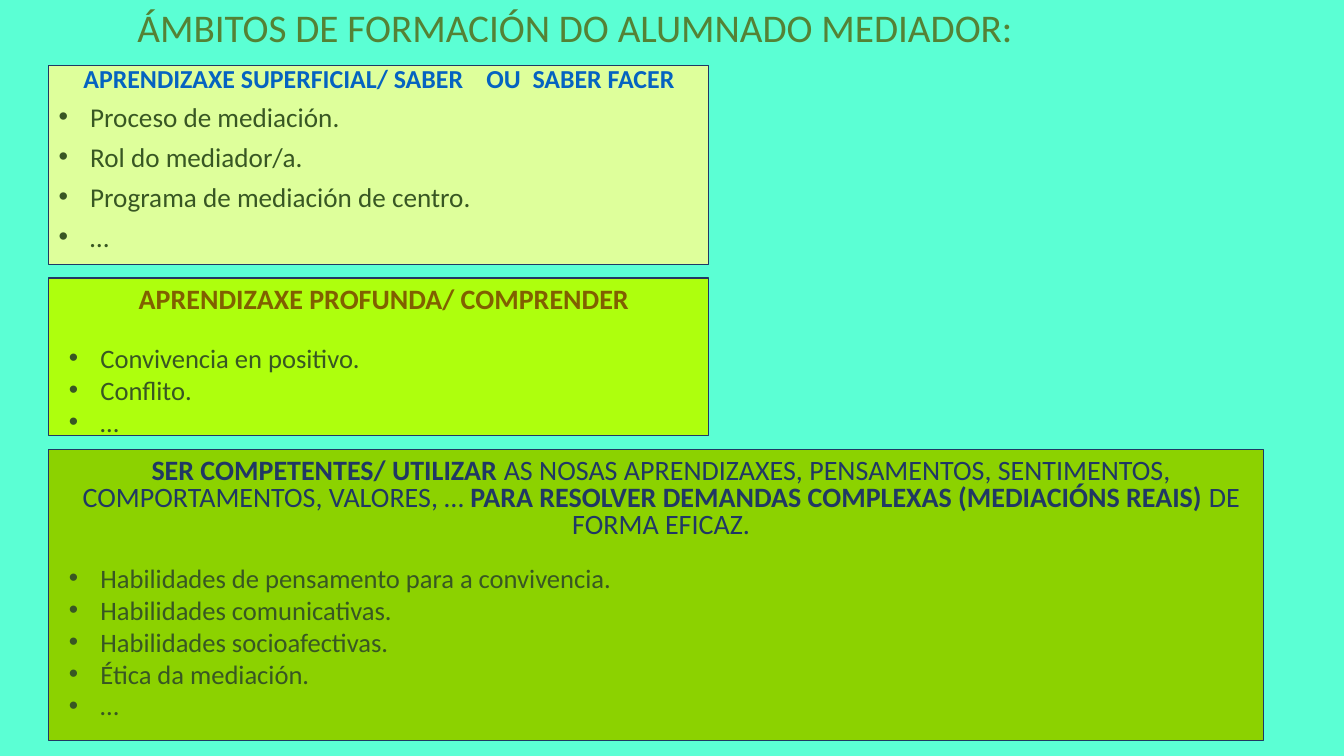
from lxml import etree
from pptx import Presentation
from pptx.dml.color import RGBColor
from pptx.enum import shapes, text
from pptx.oxml import ns
from pptx.util import Pt

AQUA = RGBColor(0x5B, 0xFF, 0xD4)
PALE = RGBColor(0xDE, 0xFF, 0x9B)
LIME = RGBColor(0xAE, 0xFF, 0x0D)
GREEN = RGBColor(0x8C, 0xD2, 0x00)
NAVY = RGBColor(0x20, 0x38, 0x64)
BLUE = RGBColor(0x05, 0x63, 0xC1)
BROWN = RGBColor(0x80, 0x60, 0x00)
FOREST = RGBColor(0x38, 0x57, 0x23)
LEAF = RGBColor(0x54, 0x82, 0x35)

FACE = "Calibri"
NO_GRID = "{2D5ABB26-0587-4C30-8999-92F81FD0307C}"
LEFT = 34.8
INDENT = 22.5


def style(para, size, color, spacing=1.0, before=0):
    font = para.font
    font.name, font.size, font.color.rgb = FACE, Pt(size), color
    para.line_spacing = spacing
    para.space_before = Pt(before)


def bullet(para):
    props = para._p.get_or_add_pPr()
    props.set("marL", str(Pt(INDENT)))
    props.set("indent", str(-Pt(INDENT)))
    font = etree.SubElement(props, ns.qn("a:buFont"))
    font.set("typeface", "Arial")
    mark = etree.SubElement(props, ns.qn("a:buChar"))
    mark.set("char", "•")
    # The schema wants the bullet ahead of the default run properties.
    props.append(props.find(ns.qn("a:defRPr")))


def add_title(slide, box, words):
    """Set the heading in a table of one cell without grid or bands."""
    table = slide.shapes.add_table(1, 1, *map(Pt, box)).table
    table.first_row = table.horz_banding = False
    table._tbl.tblPr.find(ns.qn("a:tableStyleId")).text = NO_GRID
    cell = table.cell(0, 0)
    cell.fill.background()
    cell.margin_right = Pt(11.2)
    cell.margin_top = cell.margin_bottom = Pt(3.6)
    cell.text = words
    para = cell.text_frame.paragraphs[0]
    para.alignment = text.PP_ALIGN.CENTER
    style(para, 28, LEAF)


def add_panel(slide, box, fill, inset, head, items, first, rest):
    """Draw a panel.

    head: size, colour, line spacing and (words, bold) runs.
    items: size, line spacing and words of the bullets.
    first, rest: space before the first bullet and the others.
    """
    panel = slide.shapes.add_shape(shapes.MSO_SHAPE.RECTANGLE, *map(Pt, box))
    panel.shadow.inherit = False
    panel.fill.solid()
    panel.fill.fore_color.rgb = fill
    panel.line.color.rgb = NAVY
    panel.line.width = Pt(0.75)

    frame = panel.text_frame
    frame.word_wrap = True
    frame.vertical_anchor = text.MSO_ANCHOR.TOP
    frame.margin_left, frame.margin_top = map(Pt, inset)
    frame.margin_right, frame.margin_bottom = Pt(7.2), Pt(3.6)

    size, color, spacing, runs = head
    para = frame.paragraphs[0]
    para.alignment = text.PP_ALIGN.CENTER
    style(para, size, color, spacing)
    for words, bold in runs:
        run = para.add_run()
        run.text, run.font.bold = words, bold

    size, spacing, lines = items
    for i, words in enumerate(lines):
        para = frame.add_paragraph()
        para.text = words
        para.alignment = text.PP_ALIGN.LEFT
        style(para, size, FOREST, spacing, rest if i else first)
        bullet(para)


def build(slide):
    slide.background.fill.solid()
    slide.background.fill.fore_color.rgb = AQUA
    add_panel(
        slide, (LEFT, 46.9, 471.6, 142), PALE, (7.2, 3.6),
        (18.5, BLUE, 0.7, [("APRENDIZAXE SUPERFICIAL/ SABER    OU  SABER FACER", True)]),
        (19.4, 0.8, ["Proceso de mediación.", "Rol do mediador/a.",
                     "Programa de mediación de centro.", "…"]),
        10, 10)
    add_panel(
        slide, (LEFT, 198.6, 471.6, 112.3), LIME, (14.4, 7.2),
        (20, BROWN, 0.8, [("APRENDIZAXE PROFUNDA/ COMPRENDER", True)]),
        (19, 1.0, ["Convivencia en positivo.", "Conflito.", "…"]),
        19.2, 0)
    add_panel(
        slide, (LEFT, 320.8, 867.6, 208), GREEN, (14.4, 7.2),
        (20, NAVY, 0.8, [
            ("SER COMPETENTES/ UTILIZAR ", True),
            ("AS NOSAS APRENDIZAXES, PENSAMENTOS, SENTIMENTOS, "
             "COMPORTAMENTOS, VALORES, … ", False),
            ("PARA RESOLVER DEMANDAS COMPLEXAS (MEDIACIÓNS REAIS) ", True),
            ("DE FORMA EFICAZ.", False)]),
        (19, 1.0, ["Habilidades de pensamento para a convivencia.",
                   "Habilidades comunicativas.", "Habilidades socioafectivas.",
                   "Ética da mediación.", "…"]),
        15.6, 0)
    add_title(slide, (17.3, 0, 790.6, 38.2),
              "ÁMBITOS DE FORMACIÓN DO ALUMNADO MEDIADOR:")


def main():
    deck = Presentation()
    deck.slide_width, deck.slide_height = Pt(960), Pt(540)
    build(deck.slides.add_slide(deck.slide_layouts[6]))
    deck.save("out.pptx")


if __name__ == "__main__":
    main()
